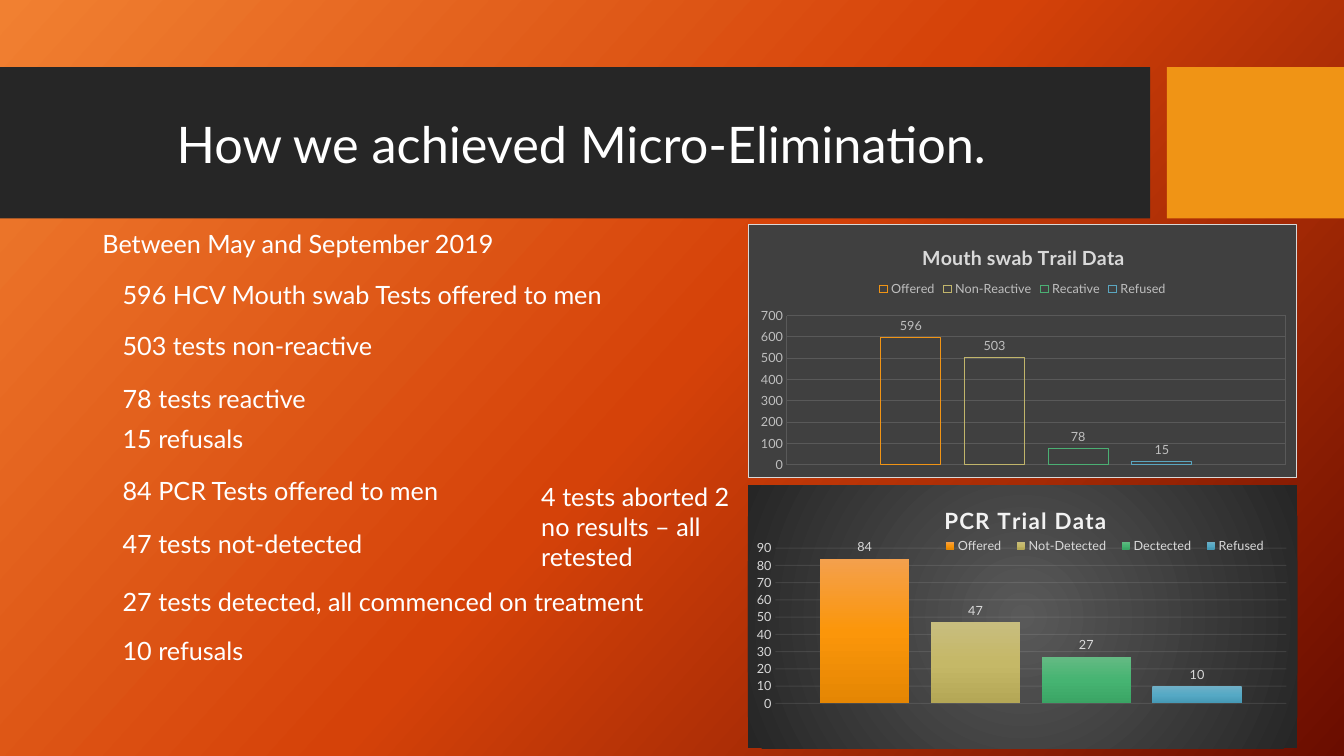
"""Build the Micro-Elimination slide with test results and two column charts."""
from pptx import Presentation
from pptx.chart.data import CategoryChartData
from pptx.dml.color import RGBColor
from pptx.enum import chart as ch, shapes, text as tx
from pptx.oxml import ns, parse_xml
from pptx.util import Pt

FONT = "Lato"
WHITE = RGBColor(0xFF, 0xFF, 0xFF)
CHARCOAL = RGBColor(0x26, 0x26, 0x26)
AMBER = RGBColor(0xF0, 0x94, 0x15)
SILVER = RGBColor(0xD9, 0xD9, 0xD9)
GREY = RGBColor(0xBF, 0xBF, 0xBF)
PALE = RGBColor(0xF2, 0xF2, 0xF2)
RULE = RGBColor(0x59, 0x59, 0x59)
SLATE = RGBColor(0x40, 0x40, 0x40)
SAND = RGBColor(0xC1, 0xB5, 0x6B)
GREEN = RGBColor(0x4B, 0xAF, 0x73)
BLUE = RGBColor(0x5A, 0xA6, 0xC0)

HEADING = "How we achieved Micro-Elimination."
PERIOD = "Between May and September 2019"
RESULTS = [
    ("596 HCV Mouth swab Tests offered to men", 196, 513),
    ("503 tests non-reactive", 232.5, 528),
    ("78 tests reactive", 270, 519),
    ("15 refusals", 299, 502),
    ("84 PCR Tests offered to men", 336, 483),
    ("47 tests not-detected", 373.5, 438),
    ("27 tests detected, all commenced on treatment", 415.5, 409),
    ("10 refusals", 450, 360),
]
ABORTED = "4 tests aborted 2 no results – all retested"
BANDS = [((0, 48, 821.5, 108), CHARCOAL), ((833.5, 48, 126.5, 108), AMBER)]
BACKDROP = [(0, "F18031"), (50, "D54209"), (100, "6A0D00")]
VIGNETTE = [(0, "595959"), (100, "262626")]

SWAB = dict(
    title="Mouth swab Trail Data", title_size=14, title_color=SILVER, spacing=0,
    box=(534.25, 160, 392.5, 181.5), top=700, step=100, gap=315, overlap=-40,
    ink=GREY, rule=RULE, rule_alpha=100, legend=ch.XL_LEGEND_POSITION.TOP,
    title_at=(0.31, 0.06), legend_at=(0.23, 0.22, 0.54, 0.07),
    plot_at=(0.07, 0.36, 0.91, 0.59),
    series=[("Offered", 596, AMBER), ("Non-Reactive", 503, SAND),
            ("Recative", 78, GREEN), ("Refused", 15, BLUE)])
PCR = dict(
    title="PCR Trial Data", title_size=16, title_color=PALE, spacing=100,
    box=(534.25, 346.5, 392.5, 188), top=90, step=10, gap=100, overlap=-24,
    ink=SILVER, rule=PALE, rule_alpha=10, legend=ch.XL_LEGEND_POSITION.BOTTOM,
    title_at=(0.35, 0.06), legend_at=(0.34, 0.19, 0.62, 0.08),
    plot_at=(0.05, 0.24, 0.93, 0.59),
    series=[("Offered", 84, [(0, "F4A04D"), (50, "FB960A"), (100, "E58603")]),
            ("Not-Detected", 47, [(0, "C8BD7E"), (50, "C5B867"), (100, "B4A756")]),
            ("Dectected", 27, [(0, "64BA83"), (50, "46B472"), (100, "3AA464")]),
            ("Refused", 10, [(0, "70B0C7"), (50, "55A9C5"), (100, "4699B5")])])


def style(font, size, color, bold=False):
    font.name, font.size, font.bold = FONT, Pt(size), bold
    font.color.rgb = color


def write(frame, content, size=18, color=WHITE, bold=False, line=None, anchor=None):
    paragraph = frame.paragraphs[0]
    run = paragraph.add_run()
    run.text = content
    style(run.font, size, color, bold)
    if line:
        paragraph.alignment = tx.PP_ALIGN.LEFT
        paragraph.line_spacing = line
    if anchor is not None:
        frame.vertical_anchor = anchor
    return run


def place(part, box):
    part.left, part.top, part.width, part.height = map(Pt, box)


def gradient(properties, stops, angle=None):
    colors = "".join(f'<a:gs pos="{at * 1000}"><a:srgbClr val="{color}"/></a:gs>'
                     for at, color in stops)
    direction = (f'<a:lin ang="{angle * 60000}" scaled="0"/>' if angle is not None else
                 '<a:path path="circle"><a:fillToRect l="50000" t="50000" '
                 'r="50000" b="50000"/></a:path>')
    fill = parse_xml(f'<a:gradFill {ns.nsdecls("a")} rotWithShape="1">'
                     f'<a:gsLst>{colors}</a:gsLst>{direction}</a:gradFill>')
    properties.replace(properties.find(ns.qn("a:solidFill")), fill)


def arrange(part, index, fractions, target=""):
    for old in part.findall(ns.qn("c:layout")):
        part.remove(old)
    values = "".join(f'<c:{key} val="{value}"/>' for key, value in zip("xywh", fractions))
    modes = '<c:xMode val="edge"/><c:yMode val="edge"/>'
    part.insert(index, parse_xml(
        f'<c:layout {ns.nsdecls("c")}><c:manualLayout>{target}{modes}{values}'
        '</c:manualLayout></c:layout>'))


def frame_chart(chart, fill, border):
    line = f'<a:solidFill><a:srgbClr val="{border}"/></a:solidFill>' if border else "<a:noFill/>"
    properties = parse_xml(
        f'<c:spPr {ns.nsdecls("c", "a")}><a:solidFill><a:srgbClr val="{fill}"/>'
        f'</a:solidFill><a:ln w="9525">{line}</a:ln></c:spPr>')
    chart._chartSpace.find(ns.qn("c:chart")).addnext(properties)
    return properties


def add_columns(slide, spec):
    data = CategoryChartData()
    data.categories = ["1"]
    for name, value, _ in spec["series"]:
        data.add_series(name, [value])
    chart = slide.shapes.add_chart(ch.XL_CHART_TYPE.COLUMN_CLUSTERED,
                                   *map(Pt, spec["box"]), data).chart
    style(chart.font, 10, WHITE)
    chart.has_title = True
    heading = write(chart.chart_title.text_frame, spec["title"], spec["title_size"],
                    spec["title_color"], bold=True)
    heading.font._element.set("spc", str(spec["spacing"]))
    chart.has_legend = True
    chart.legend.position = spec["legend"]
    chart.legend.include_in_layout = False
    style(chart.legend.font, 9, spec["ink"])

    counts = chart.value_axis
    counts.minimum_scale, counts.maximum_scale, counts.major_unit = 0, spec["top"], spec["step"]
    counts.major_tick_mark = ch.XL_TICK_MARK.NONE
    counts.format.line.fill.background()
    style(counts.tick_labels.font, 9, spec["ink"])
    chart.category_axis.visible = False
    ruled = [counts]
    if spec["rule_alpha"] == 100:
        chart.category_axis.has_major_gridlines = True
        ruled.append(chart.category_axis)
    for axis in ruled:
        rule = axis.major_gridlines.format.line
        rule.width = Pt(0.75)
        rule.color.rgb = spec["rule"]
    shade = counts._element.find(".//" + ns.qn("c:majorGridlines")).find(".//" + ns.qn("a:srgbClr"))
    shade.append(parse_xml(f'<a:alpha {ns.nsdecls("a")} val="{spec["rule_alpha"] * 1000}"/>'))

    plot = chart.plots[0]
    plot.gap_width, plot.overlap, plot.vary_by_categories = spec["gap"], spec["overlap"], False
    for column, (_, _, paint) in zip(plot.series, spec["series"]):
        column.invert_if_negative = False
        if isinstance(paint, list):
            column.format.fill.solid()
            column.format.fill.fore_color.rgb = AMBER
            gradient(column._element.find(ns.qn("c:spPr")), paint, 90)
        else:
            column.format.fill.background()
            column.format.line.color.rgb = paint
            column.format.line.width = Pt(0.75)
        labels = column.data_labels
        labels.show_value = True
        labels.position = ch.XL_LABEL_POSITION.OUTSIDE_END
        style(labels.font, 9, spec["ink"])

    arrange(chart.chart_title._element, 1, spec["title_at"])
    arrange(chart.legend._element, 1, spec["legend_at"])
    arrange(chart._chartSpace.find(".//" + ns.qn("c:plotArea")), 0, spec["plot_at"],
            '<c:layoutTarget val="inner"/>')
    return chart


def add_note(slide, content, box):
    frame = slide.shapes.add_textbox(*map(Pt, box)).text_frame
    frame.word_wrap = True
    frame.auto_size = tx.MSO_AUTO_SIZE.SHAPE_TO_FIT_TEXT
    write(frame, content)


def main():
    deck = Presentation()
    deck.slide_width, deck.slide_height = Pt(960), Pt(540)
    slide = deck.slides.add_slide(deck.slide_layouts[1])
    slide.background.fill.solid()
    slide.background.fill.fore_color.rgb = AMBER
    gradient(slide._element.find(".//" + ns.qn("p:bgPr")), BACKDROP, 42)

    for index, (box, color) in enumerate(BANDS):
        band = slide.shapes.add_shape(shapes.MSO_SHAPE.RECTANGLE, *map(Pt, box))
        band.shadow.inherit = False
        band.fill.solid()
        band.fill.fore_color.rgb = color
        band.line.fill.background()
        slide.shapes._spTree.insert(2 + index, band._element)

    heading, period = slide.shapes.title, slide.placeholders[1]
    place(heading, (119, 75.5, 666, 60))
    write(heading.text_frame, HEADING, 36, line=0.9, anchor=tx.MSO_ANCHOR.MIDDLE)
    place(period, (66, 162, 828, 52))
    properties = period.text_frame.paragraphs[0]._p.get_or_add_pPr()
    properties.set("marL", "0")
    properties.set("indent", "0")
    properties.append(parse_xml(f'<a:buNone {ns.nsdecls("a")}/>'))
    period.text_frame.paragraphs[0].space_before = Pt(0)
    write(period.text_frame, PERIOD, line=0.9, anchor=tx.MSO_ANCHOR.TOP)

    for result, top, width in RESULTS:
        add_note(slide, result, (80.5, top, width, 29))
    add_note(slide, ABORTED, (379.5, 340, 168, 51))

    frame_chart(add_columns(slide, SWAB), SLATE, SILVER)
    gradient(frame_chart(add_columns(slide, PCR), CHARCOAL, None), VIGNETTE)
    deck.save("out.pptx")


if __name__ == "__main__":
    main()
